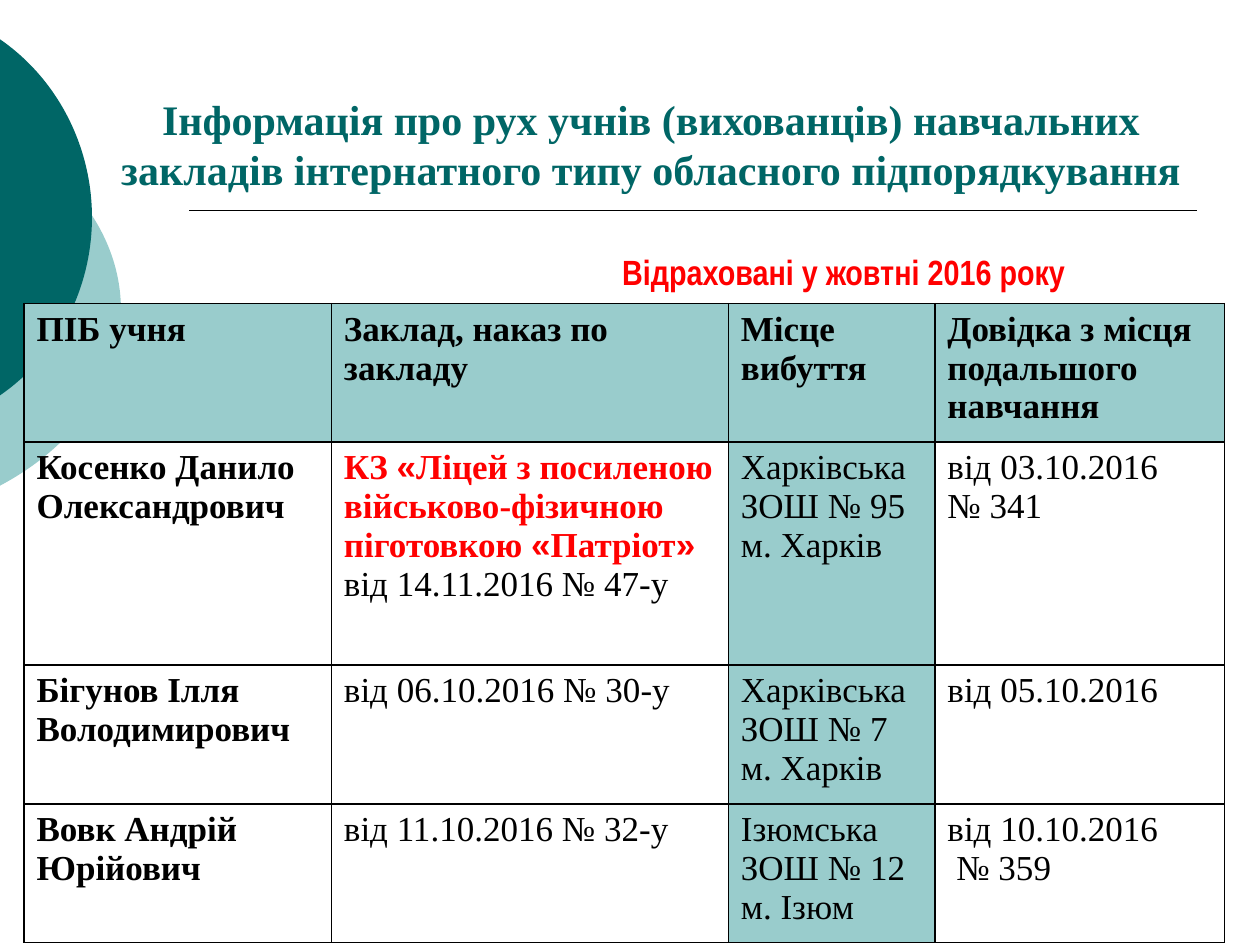
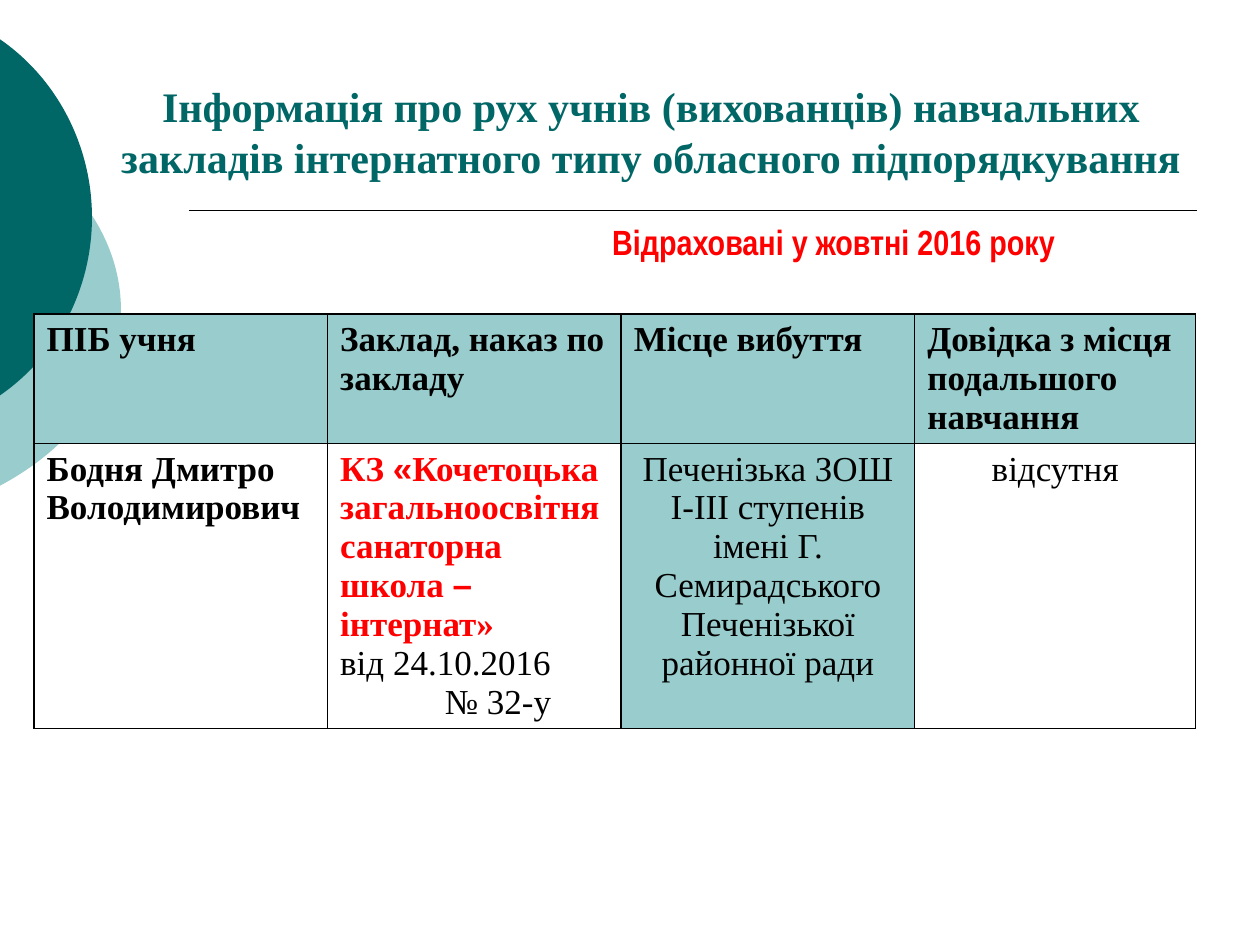
import itertools

import pptx
import pptx.dml.color
import pptx.enum.shapes
import pptx.enum.text
import pptx.oxml
import pptx.oxml.ns
import pptx.util
from pptx.util import Inches

# Shared style
TEAL = pptx.dml.color.RGBColor(0x00, 0x66, 0x66)
AQUA = pptx.dml.color.RGBColor(0x99, 0xCC, 0xCC)
RED = pptx.dml.color.RGBColor(0xFF, 0x00, 0x00)
BLACK = pptx.dml.color.RGBColor(0x00, 0x00, 0x00)
SERIF, SANS, NARROW = "Times New Roman", "Arial", "Arial Narrow"
CENTER = pptx.enum.text.PP_ALIGN.CENTER
NAMESPACE = pptx.oxml.ns.nsdecls("a")
TABLE_LINE_SPACING = 22.2
DESTINATION_COLUMN = 2

# Content: each cell is a list of lines, a line is text or (text, options);
# sans_marks names the marks of a red school name that are set in the sans font
TITLE = ("Інформація про рух учнів (вихованців) навчальних закладів "
         "інтернатного типу обласного підпорядкування")
SUBTITLE = "Відраховані у жовтні 2016 року"
HEADER = [["ПІБ учня"], ["Заклад, наказ по закладу"], ["Місце вибуття"],
          ["Довідка з місця подальшого навчання"]]
SLIDES = [
    {
        "title_top": 0.44,
        "subtitle_at": (4.84, 1.94),
        "table_at": (0.19, 2.41),
        "columns": [2.44, 3.15, 1.64, 2.3],
        "row_heights": [1.1, 1.77, 1.1, 1.1],
        "pupils": [
            [["Косенко Данило Олександрович"],
             [("КЗ «Ліцей з посиленою військово-фізичною піготовкою «Патріот»",
               {"sans_marks": "«»"}),
              "від 14.11.2016 № 47-у"],
             ["Харківська ЗОШ № 95", "м. Харків"],
             ["від 03.10.2016", "№ 341"]],
            [["Бігунов Ілля Володимирович"],
             ["від 06.10.2016 № 30-у"],
             ["Харківська ЗОШ № 7", "м. Харків"],
             ["від 05.10.2016"]],
            [["Вовк Андрій Юрійович"],
             ["від 11.10.2016 № 32-у"],
             ["Ізюмська ЗОШ № 12", "м. Ізюм"],
             ["від 10.10.2016", ("№ 359", {"indent": 0.07})]],
        ],
    },
    {
        "title_top": 0.34,
        "subtitle_at": (4.76, 1.7),
        "table_at": (0.27, 2.49),
        "columns": [2.33, 2.33, 2.33, 2.23],
        "row_heights": [1.03, 2.26],
        "pupils": [
            [["Бодня Дмитро Володимирович"],
             [("КЗ «Кочетоцька загальноосвітня санаторна школа – інтернат»",
               {"sans_marks": "«–"}),
              "від 24.10.2016", ("№ 32-у", {"indent": 0.83})],
             [("Печенізька ЗОШ І-ІІІ ступенів імені Г. Семирадського "
               "Печенізької районної ради", {"centered": True})],
             [("відсутня", {"centered": True})]],
        ],
    },
]

# Discs cut off by the left slide edge: frame (left, top, width, height),
# half the cut edge, curve handles (x from the cut, y from the middle), colour
DISCS = [
    ((-3.54, 0.75, 4.5, 3.42), 1.4, (0.61, 1.08), 0.56, AQUA),
    ((-2.65, 0, 3.38, 3.45), 1.42, (0.47, 1.1), 0.56, TEAL),
]
CUT_X = -0.01


def style_font(font, name, size, color, bold=True):
    font.name, font.size, font.bold = name, pptx.util.Pt(size), bold
    font.color.rgb = color


def add_disc(slide, frame, half_cut, cut_handle, tip_handle, color):
    left, top, width, height = frame
    builder = slide.shapes.build_freeform(0, 0)
    builder.add_line_segments([(Inches(width), 0), (0, Inches(height))])
    disc = builder.convert_to_shape()
    disc.left, disc.top = Inches(left), Inches(top)
    disc.width, disc.height = Inches(width), Inches(height)

    # Two curves, mirrored about the middle, from cut edge to tip and back
    cut, middle = CUT_X - left, height / 2
    handle_x, handle_y = cut + cut_handle[0], cut_handle[1]

    def point(x, y):
        return '<a:pt x="%d" y="%d"/>' % (Inches(x), Inches(middle + y))

    def curve(*points):
        return "<a:cubicBezTo>%s</a:cubicBezTo>" % "".join(point(*p) for p in points)

    outline = "<a:moveTo>%s</a:moveTo>%s%s<a:close/>" % (
        point(cut, -half_cut),
        curve((handle_x, -handle_y), (width, -tip_handle), (width, 0)),
        curve((width, tip_handle), (handle_x, handle_y), (cut, half_cut)))
    path_list = disc.element.spPr.find(".//" + pptx.oxml.ns.qn("a:pathLst"))
    path_list.getparent().replace(path_list, pptx.oxml.parse_xml(
        '<a:pathLst %s><a:path w="%d" h="%d">%s</a:path></a:pathLst>'
        % (NAMESPACE, Inches(width), Inches(height), outline)))

    disc.shadow.inherit = False
    disc.fill.solid()
    disc.fill.fore_color.rgb = color
    disc.line.fill.background()
    return disc


def add_rule(slide):
    rule = slide.shapes.add_connector(pptx.enum.shapes.MSO_CONNECTOR.STRAIGHT,
                                      Inches(1.5), Inches(1.67), Inches(9.5), Inches(1.67))
    rule.line.color.rgb = BLACK
    rule.line.width = pptx.util.Pt(1)
    rule.element.spPr.append(pptx.oxml.parse_xml("<a:effectLst %s/>" % NAMESPACE))
    return rule


def decorate_layout(layout, slide):
    """Draw the shared decoration and move it to the layout, behind its placeholders."""
    decoration = [add_disc(slide, *disc) for disc in DISCS] + [add_rule(slide)]
    for position, shape in enumerate(decoration):
        layout.shapes.element.insert(2 + position, shape.element)


def set_title(slide, top):
    title = slide.shapes.title
    title.left, title.top = Inches(0.67), Inches(top)
    title.width, title.height = Inches(8.99), Inches(1.1)
    frame = title.text_frame
    frame.text = TITLE
    frame.word_wrap = True
    frame.auto_size = pptx.enum.text.MSO_AUTO_SIZE.NONE
    frame.vertical_anchor = pptx.enum.text.MSO_ANCHOR.BOTTOM
    frame.margin_left = frame.margin_right = frame.margin_bottom = 0
    paragraph = frame.paragraphs[0]
    paragraph.alignment = CENTER
    style_font(paragraph.font, SERIF, 24, TEAL)


def add_subtitle(slide, left, top):
    box = slide.shapes.add_textbox(Inches(left), Inches(top), Inches(4.96), Inches(0.43))
    box.text_frame.word_wrap = True
    paragraph = box.text_frame.paragraphs[0]
    paragraph.text = SUBTITLE
    style_font(paragraph.font, NARROW, 20, RED)


def add_borders(cell):
    properties = cell._tc.get_or_add_tcPr()
    for position, side in enumerate(("lnL", "lnR", "lnT", "lnB")):
        properties.insert(position, pptx.oxml.parse_xml(
            '<a:%s %s w="12700"><a:solidFill><a:srgbClr val="%s"/></a:solidFill></a:%s>'
            % (side, NAMESPACE, BLACK, side)))


def write_line(paragraph, text, bold, sans_marks="", centered=False, indent=0):
    is_school = bool(sans_marks)
    style_font(paragraph.font, SERIF, 20, RED if is_school else BLACK, bold or is_school)
    paragraph.line_spacing = pptx.util.Pt(TABLE_LINE_SPACING)
    for is_mark, letters in itertools.groupby(text, lambda letter: letter in sans_marks):
        run = paragraph.add_run()
        run.text = "".join(letters)
        if is_mark:
            run.font.name = SANS
    if centered:
        paragraph.alignment = CENTER
    if indent:
        paragraph._p.get_or_add_pPr().set("marL", str(Inches(indent)))


def fill_cell(cell, lines, bold, shaded):
    frame = cell.text_frame
    for number, line in enumerate(lines):
        text, options = (line, {}) if isinstance(line, str) else line
        paragraph = frame.add_paragraph() if number else frame.paragraphs[0]
        write_line(paragraph, text, bold, **options)
    if shaded:
        cell.fill.solid()
        cell.fill.fore_color.rgb = AQUA
    else:
        cell.fill.background()
    add_borders(cell)


def add_pupil_table(slide, content):
    rows = [HEADER] + content["pupils"]
    columns, heights = content["columns"], content["row_heights"]
    left, top = content["table_at"]
    table = slide.shapes.add_table(len(rows), len(columns), Inches(left), Inches(top),
                                   Inches(sum(columns)), Inches(sum(heights))).table
    table.first_row = table.horz_banding = False
    for column, width in zip(table.columns, columns):
        column.width = Inches(width)
    for row, height in zip(table.rows, heights):
        row.height = Inches(height)
    for row_number, row in enumerate(rows):
        for column_number, lines in enumerate(row):
            is_header = row_number == 0
            fill_cell(table.cell(row_number, column_number), lines,
                      bold=is_header or column_number == 0,
                      shaded=is_header or column_number == DESTINATION_COLUMN)


def main():
    presentation = pptx.Presentation()
    presentation.slide_width, presentation.slide_height = Inches(10), Inches(7.5)
    layout = presentation.slide_layouts[5]
    for number, content in enumerate(SLIDES):
        slide = presentation.slides.add_slide(layout)
        if number == 0:
            decorate_layout(layout, slide)
        set_title(slide, content["title_top"])
        add_subtitle(slide, *content["subtitle_at"])
        add_pupil_table(slide, content)
    presentation.save("out.pptx")


if __name__ == "__main__":
    main()
